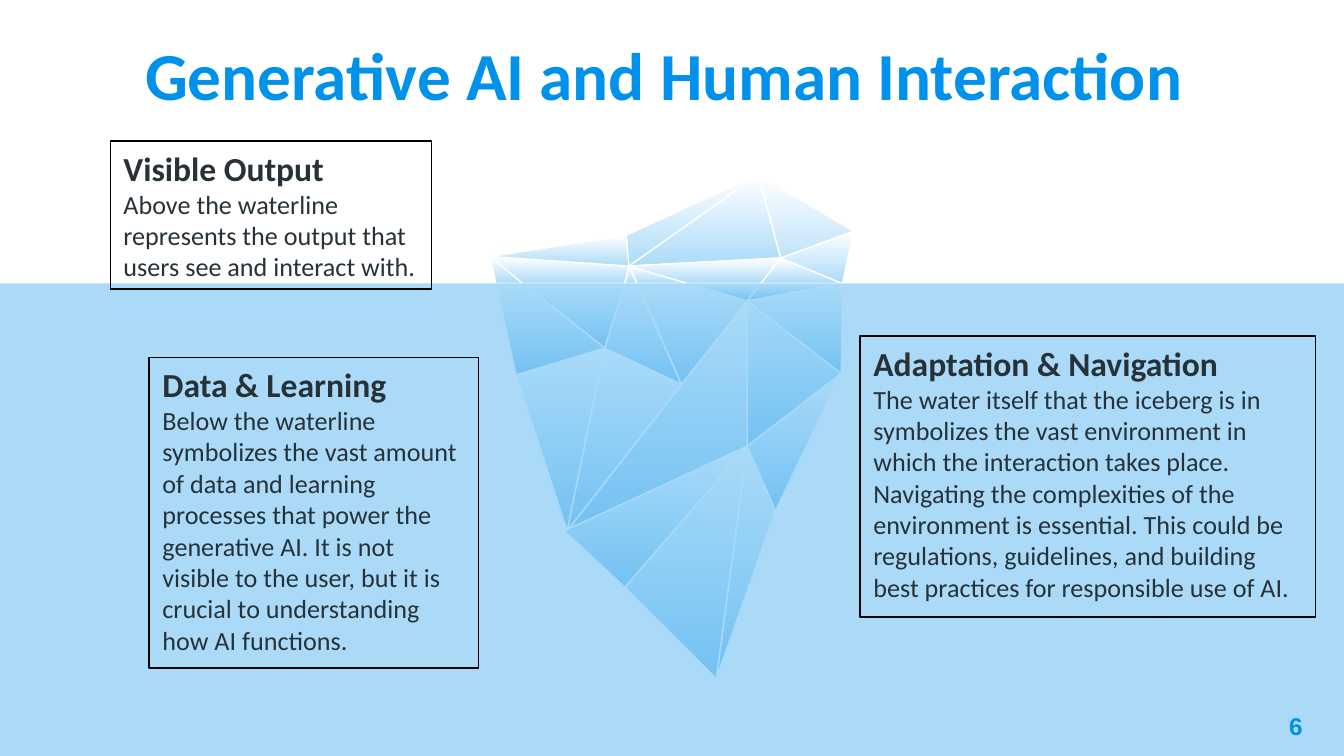
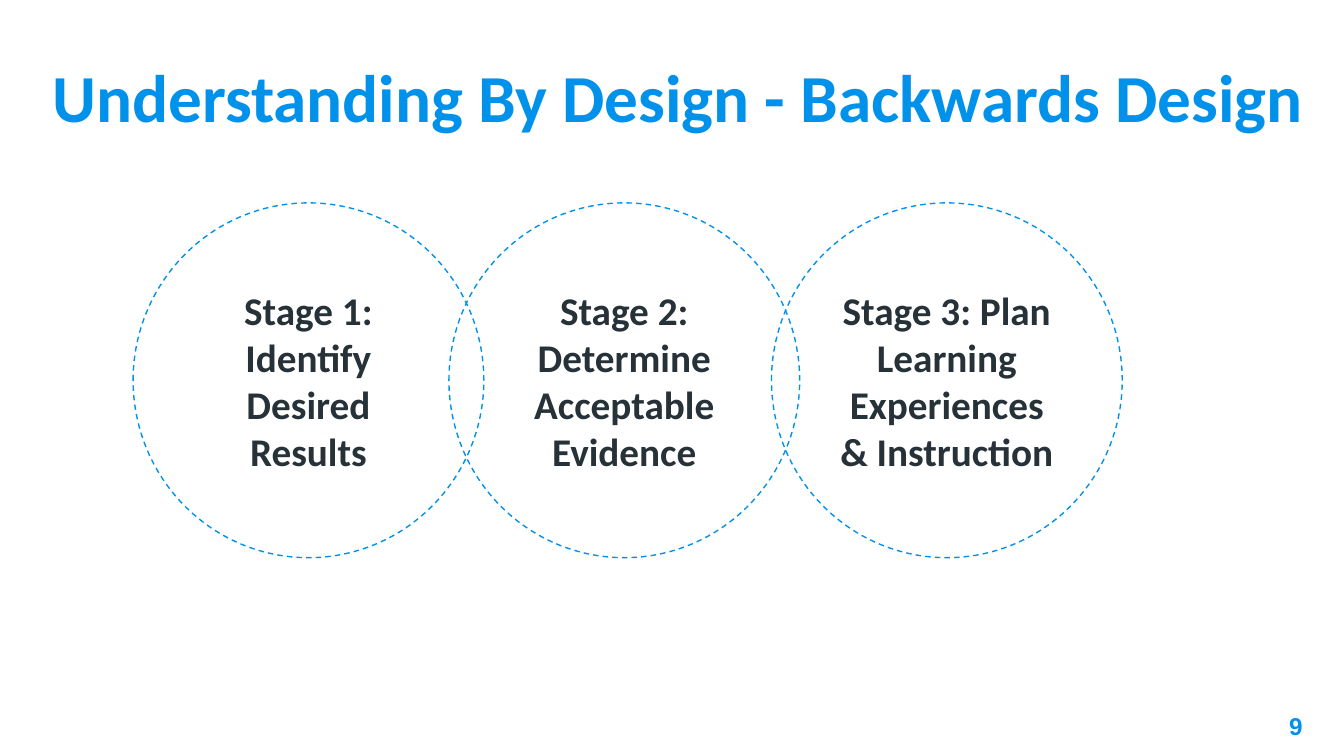
from dataclasses import dataclass
from typing import NamedTuple

from lxml.etree import SubElement
from pptx import Presentation
from pptx.dml.color import RGBColor
from pptx.enum.dml import MSO_LINE
from pptx.enum.shapes import MSO_SHAPE as Preset
from pptx.enum.text import MSO_ANCHOR as Anchor, MSO_AUTO_SIZE as AutoSize, PP_ALIGN as Align
from pptx.oxml.ns import qn
from pptx.util import Inches, Pt

COLUMNS, ROWS = 100, 56.25
COLORS = {
    "accent": "0091EA",
    "ink": "263238",
    "outline": "000000",
    "snow": "FFFFFF",
    "ice": "ACDBF8",
}
WATERLINE = 21.1
WATER_OPACITY = 33
LINE_WIDTH = Pt(0.75)


class Box(NamedTuple):
    """A rectangle in grid columns and rows."""

    column: float
    row: float
    width: float
    height: float


@dataclass(frozen=True)
class TextStyle:
    """The look of one paragraph."""

    size: float
    color: str = "ink"
    bold: bool = True
    font: str = "Calibri"
    alignment: Align = Align.LEFT


@dataclass(frozen=True)
class Card:
    """An outlined note with a heading and a body."""

    box: Box
    heading: str
    body: str


@dataclass(frozen=True)
class Stage:
    """One circle in the chain of design stages."""

    column: float
    text: str


TITLE = TextStyle(36, "accent")
HEADING = TextStyle(18)
BODY = TextStyle(14, bold=False)
STAGE = TextStyle(21, alignment=Align.CENTER)
PAGE_NUMBER = TextStyle(13, "accent", font="Arial", alignment=Align.RIGHT)
PAGE_NUMBER_BOX = Box(91.9, 51.9, 6, 4.3)
STAGE_ROW, STAGE_WIDTH, STAGE_HEIGHT = 15.1, 26.1, 26.4

CARDS = [
    Card(
        Box(8.2, 10.5, 23.9, 11),
        "Visible Output",
        "Above the waterline represents the output that users see and interact with.",
    ),
    Card(
        Box(11.1, 26.6, 24.5, 23.1),
        "Data & Learning",
        "Below the waterline symbolizes the vast amount of data and learning processes "
        "that power the generative AI. It is not visible to the user, but it is crucial "
        "to understanding how AI functions.",
    ),
    Card(
        Box(64, 25, 33.9, 20.9),
        "Adaptation & Navigation",
        "The water itself that the iceberg is in symbolizes the vast environment in which "
        "the interaction takes place. Navigating the complexities of the environment is "
        "essential. This could be regulations, guidelines, and building best practices "
        "for responsible use of AI.",
    ),
]

STAGES = [
    Stage(9.9, "Stage 1: Identify Desired Results"),
    Stage(33.4, "Stage 2: Determine Acceptable Evidence"),
    Stage(57.4, "Stage 3: Plan Learning Experiences & Instruction"),
]

ICE_POINTS = {
    "A": (36.5, 19.1), "B": (46.6, 17.5), "C": (56.4, 13), "D": (63.5, 17.2),
    "E": (58.1, 19.2), "F": (46.8, 19.8), "G": (36.9, WATERLINE), "H": (38.9, WATERLINE),
    "I": (46.5, WATERLINE), "J": (47.4, WATERLINE), "K": (51.2, WATERLINE),
    "L": (56.6, WATERLINE), "M": (62.7, WATERLINE), "N": (38.4, 27.9), "O": (45, 25.9),
    "P": (50.7, 28.6), "Q": (55.6, 22.4), "R": (62.6, 27.8), "S": (55.6, 33.2),
    "T": (42.2, 39.5), "U": (46.5, 43.7), "V": (57.7, 38), "W": (53.3, 50.5),
    "X": (42, 39.5),
}
ICE_FACETS = (
    "MAH CFE CDME AHG FIHA CFAB EML JFK BFA DEM JFI MRSQ OTN IOH SVW MQL PJKQ "
    "POT QTS HONG MQR OPJI XSU UWS RVS FELK QLK"
).split()


def grid(cells: float) -> int:
    """Turn grid cells into a length."""
    return Inches(cells / 10)


def rgb(name: str) -> RGBColor:
    """Look up a colour by name."""
    return RGBColor.from_string(COLORS[name])


def write(shape, lines: list[tuple[str, TextStyle]], anchor: Anchor, inset: float = 1) -> None:
    """Fill a shape with styled paragraphs."""
    frame = shape.text_frame
    frame.word_wrap = True
    frame.auto_size = AutoSize.NONE
    frame.vertical_anchor = anchor
    frame.margin_left = frame.margin_right = grid(1)
    frame.margin_top = frame.margin_bottom = grid(inset)
    frame.text = "\n".join(text for text, _ in lines)
    for paragraph, (_, style) in zip(frame.paragraphs, lines):
        paragraph.alignment = style.alignment
        paragraph.font.size = Pt(style.size)
        paragraph.font.name = style.font
        paragraph.font.bold = style.bold
        paragraph.font.color.rgb = rgb(style.color)


def add_outline(slide, preset: Preset, box: Box, color: str):
    """Add an unfilled preset shape with a thin line."""
    shape = slide.shapes.add_shape(preset, *map(grid, box))
    shape.shadow.inherit = False
    shape.fill.background()
    shape.line.color.rgb = rgb(color)
    shape.line.width = LINE_WIDTH
    return shape


def add_titled_slide(presentation, title: str, box: Box, number: int):
    """Add a slide with its title and page number."""
    slide = presentation.slides.add_slide(presentation.slide_layouts[5])
    shape = slide.shapes.title
    shape.left, shape.top, shape.width, shape.height = map(grid, box)
    write(shape, [(title, TITLE)], Anchor.BOTTOM)
    footer = slide.shapes.add_textbox(*map(grid, PAGE_NUMBER_BOX))
    write(footer, [(str(number), PAGE_NUMBER)], Anchor.TOP)
    return slide


def add_iceberg(slide) -> None:
    """Draw the iceberg as a group of shaded facets."""
    group = slide.shapes.add_group_shape()
    for facet in ICE_FACETS:
        start, *others = [tuple(map(grid, ICE_POINTS[name])) for name in facet]
        builder = group.shapes.build_freeform(*start)
        builder.add_line_segments(others, close=True)
        shape = builder.convert_to_shape()
        shape.shadow.inherit = False
        shape.fill.gradient()
        shape.fill.gradient_angle = 270
        for stop, color in zip(shape.fill.gradient_stops, ("snow", "ice")):
            stop.color.rgb = rgb(color)
        shape.line.color.rgb = rgb("snow")
        shape.line.width = LINE_WIDTH


def add_water(slide) -> None:
    """Lay translucent water over everything below the waterline."""
    box = Box(0, WATERLINE, COLUMNS, ROWS - WATERLINE)
    water = slide.shapes.add_shape(Preset.RECTANGLE, *map(grid, box))
    water.shadow.inherit = False
    water.line.fill.background()
    water.fill.solid()
    water.fill.fore_color.rgb = rgb("accent")
    color = water.fill._xPr.find(qn("a:solidFill")).find(qn("a:srgbClr"))
    SubElement(color, qn("a:alpha")).set("val", str(WATER_OPACITY * 1000))


def add_card(slide, card: Card) -> None:
    """Draw a note box."""
    shape = add_outline(slide, Preset.RECTANGLE, card.box, "outline")
    write(shape, [(card.heading, HEADING), (card.body, BODY)], Anchor.TOP, 0.5)


def add_stage(slide, stage: Stage) -> None:
    """Draw a dashed stage circle."""
    box = Box(stage.column, STAGE_ROW, STAGE_WIDTH, STAGE_HEIGHT)
    shape = add_outline(slide, Preset.OVAL, box, "accent")
    shape.line.dash_style = MSO_LINE.DASH
    write(shape, [(stage.text, STAGE)], Anchor.MIDDLE)


def main() -> None:
    """Build and save the presentation."""
    presentation = Presentation()
    presentation.slide_width, presentation.slide_height = grid(COLUMNS), grid(ROWS)

    iceberg = add_titled_slide(
        presentation, "Generative AI and Human Interaction", Box(9.8, 1.8, 85.2, 7.7), 6
    )
    add_iceberg(iceberg)
    add_water(iceberg)
    for card in CARDS:
        add_card(iceberg, card)

    design = add_titled_slide(
        presentation, "Understanding By Design - Backwards Design", Box(2.9, 3.4, 96.5, 7.7), 9
    )
    for stage in STAGES:
        add_stage(design, stage)

    presentation.save("out.pptx")


if __name__ == "__main__":
    main()
